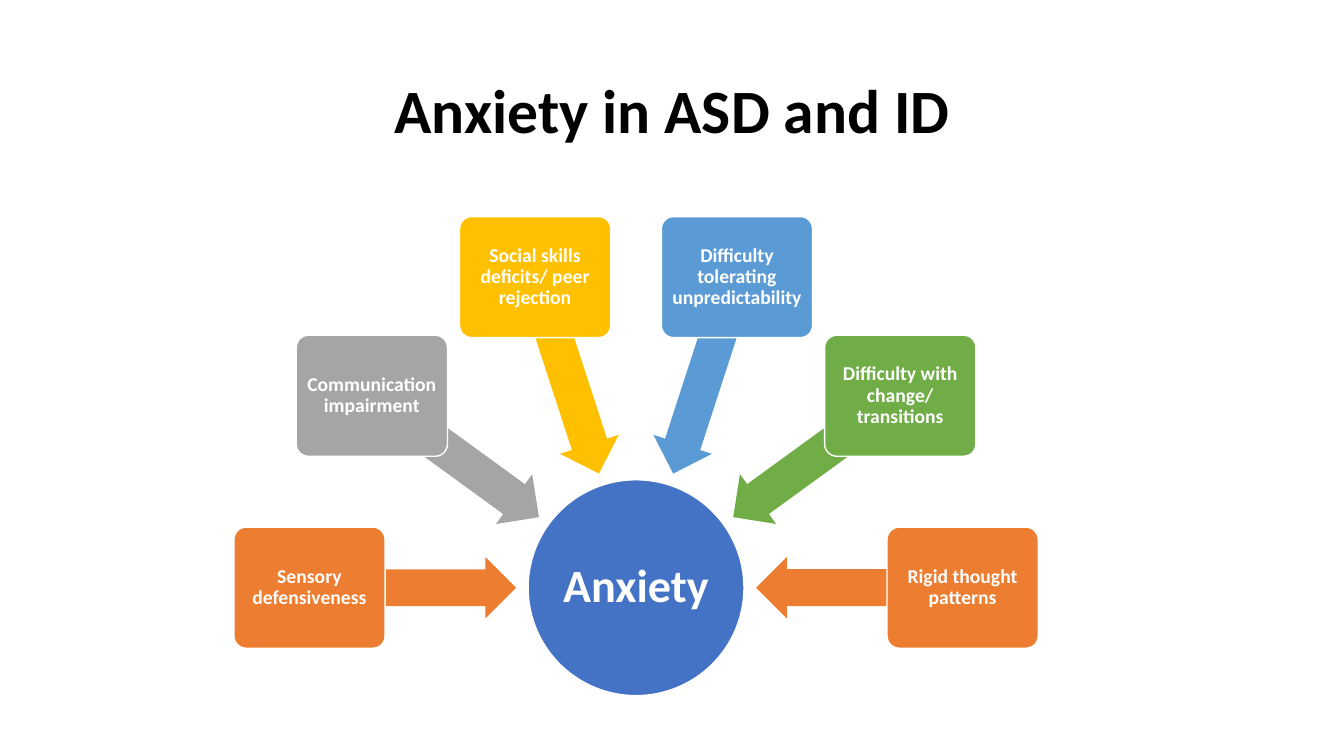
import math

import pptx
import pptx.dml.color
import pptx.enum.shapes
import pptx.enum.text
import pptx.util

Cm = pptx.util.Cm
RGBColor = pptx.dml.color.RGBColor
SHAPE = pptx.enum.shapes.MSO_SHAPE

BLACK = RGBColor(0x00, 0x00, 0x00)
WHITE = RGBColor(0xFF, 0xFF, 0xFF)
BLUE = RGBColor(0x44, 0x72, 0xC4)
ORANGE = RGBColor(0xED, 0x7D, 0x31)
GREY = RGBColor(0xA5, 0xA5, 0xA5)
GOLD = RGBColor(0xFF, 0xC0, 0x00)
SKY = RGBColor(0x5B, 0x9B, 0xD5)
GREEN = RGBColor(0x70, 0xAD, 0x47)

# Lengths in centimetres
HUB_X, HUB_Y, HUB_SIZE = 16.03, 14.81, 5.44
CAUSE_RADIUS, ARROW_RADIUS = 8.23, 5.63
CAUSE_SIZE = (3.81, 3.05)
ARROW_SIZE = (5.21, 1.55)

CAUSES = [
    ("Sensory defensiveness", ORANGE),
    ("Communication impairment", GREY),
    ("Social skills deficits/ peer rejection", GOLD),
    ("Difficulty tolerating unpredictability", SKY),
    ("Difficulty with change/ transitions", GREEN),
    ("Rigid thought patterns", ORANGE),
]


class RadialSlide:
    font = "Calibri"

    def __init__(self, slide):
        self.slide = slide

    def label(self, holder, text, size, color, inset):
        frame = holder.text_frame
        frame.text = text
        frame.word_wrap = True
        frame.vertical_anchor = pptx.enum.text.MSO_ANCHOR.MIDDLE
        frame.margin_left = frame.margin_right = Cm(inset)
        frame.margin_top = frame.margin_bottom = Cm(inset)
        paragraph = frame.paragraphs[0]
        paragraph.alignment = pptx.enum.text.PP_ALIGN.CENTER
        paragraph.line_spacing = 0.9
        font = paragraph.runs[0].font
        font.name, font.size, font.bold = self.font, pptx.util.Pt(size), True
        font.color.rgb = color

    def title(self, text):
        box = self.slide.shapes.add_textbox(Cm(2.34), Cm(1.02), Cm(29.21), Cm(3.68))
        self.label(box, text, 44, BLACK, 0.2)

    def solid(self, preset, x, y, size, color):
        """Add a filled shape centred on x, y."""
        width, height = size
        shape = self.slide.shapes.add_shape(
            preset, Cm(x - width / 2), Cm(y - height / 2), Cm(width), Cm(height))
        shape.shadow.inherit = False
        shape.fill.solid()
        shape.fill.fore_color.rgb = color
        shape.line.fill.background()
        return shape

    def outline(self, shape):
        shape.line.color.rgb = WHITE
        shape.line.width = pptx.util.Pt(1)

    def hub(self, text):
        circle = self.solid(SHAPE.OVAL, HUB_X, HUB_Y, (HUB_SIZE, HUB_SIZE), BLUE)
        self.outline(circle)
        self.label(circle, text, 33, WHITE, 0.05)

    def arrow(self, x, y, angle, color):
        arrow = self.solid(SHAPE.LEFT_ARROW, x, y, ARROW_SIZE, color)
        arrow.adjustments[0], arrow.adjustments[1] = 0.6, 0.5
        arrow.rotation = angle

    def cause(self, x, y, text, color):
        card = self.solid(SHAPE.ROUNDED_RECTANGLE, x, y, CAUSE_SIZE, color)
        card.adjustments[0] = 0.1
        self.outline(card)
        self.label(card, text, 14, WHITE, 0.08)


def around_hub(radius, angle):
    turn = math.radians(angle)
    return HUB_X + radius * math.cos(turn), HUB_Y + radius * math.sin(turn)


def main():
    deck = pptx.Presentation()
    deck.slide_width, deck.slide_height = Cm(33.87), Cm(19.05)
    page = RadialSlide(deck.slides.add_slide(deck.slide_layouts[6]))

    # Title and central circle
    page.title("Anxiety in ASD and ID")
    page.hub("Anxiety")

    # Causes spread evenly over the upper half circle
    step = 180 / (len(CAUSES) - 1)
    for index, (text, color) in enumerate(CAUSES):
        angle = (180 + index * step) % 360
        page.arrow(*around_hub(ARROW_RADIUS, angle), angle, color)
        page.cause(*around_hub(CAUSE_RADIUS, angle), text, color)

    deck.save("out.pptx")


if __name__ == "__main__":
    main()
